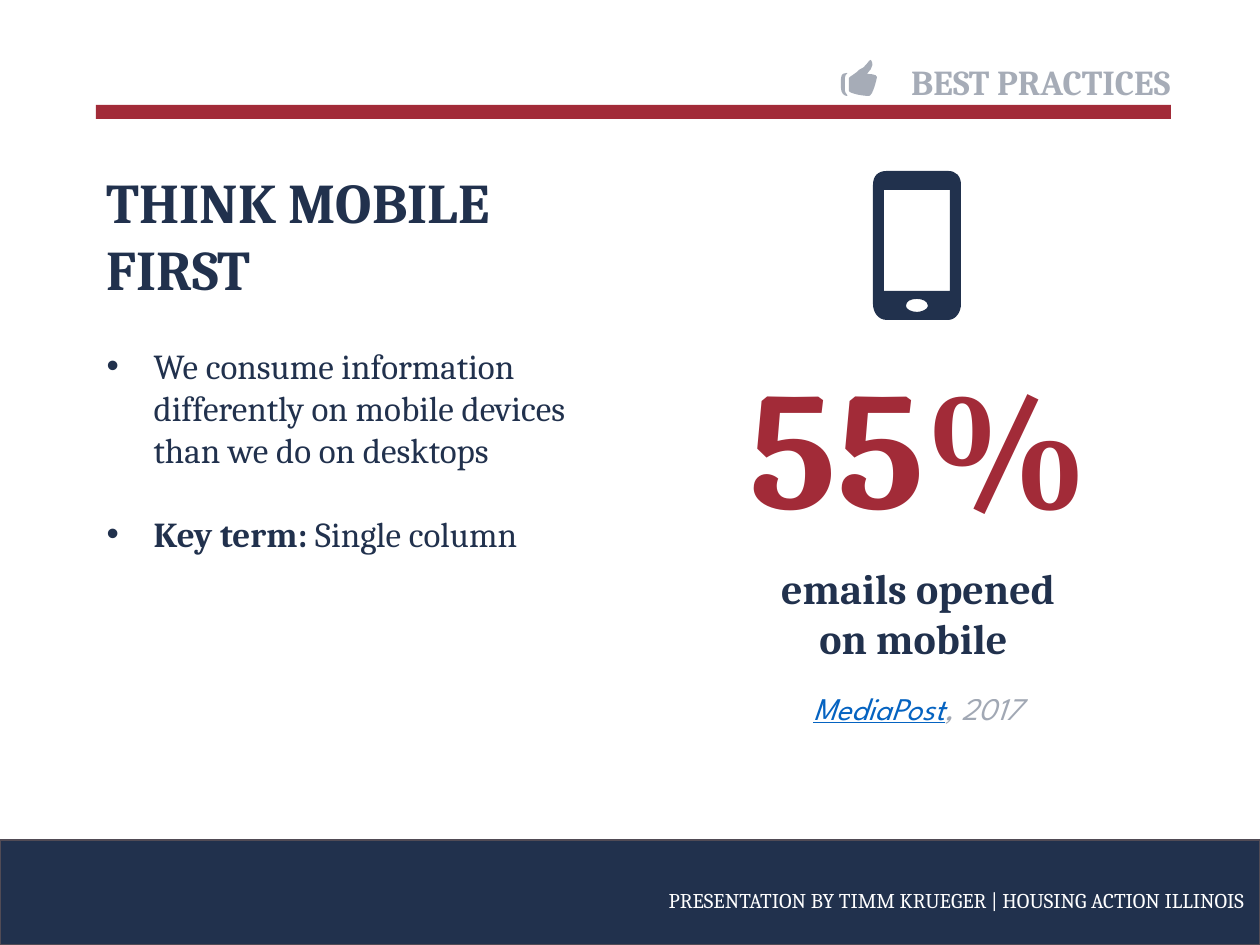
from pptx import Presentation, util as u
from pptx.dml.color import RGBColor
from pptx.enum import shapes, text
from pptx.oxml import ns, xmlchemy as xml

NAVY = RGBColor(0x21, 0x31, 0x4D)
RED = RGBColor(0xA2, 0x2B, 0x38)
WHITE = RGBColor(0xFF, 0xFF, 0xFF)
EDGE = RGBColor(0x51, 0x4B, 0x55)
LINK = RGBColor(0x05, 0x63, 0xC1)
PX = 914400 / 126


def write(para, words, size=20, color=NAVY, bold=False, slant=False, line=False,
          face="Cambria", align=text.PP_ALIGN.LEFT):
    para.alignment = align
    run = para.add_run()
    run.text = words
    font = run.font
    font.name, font.size, font.color.rgb = face, u.Pt(size), color
    font.bold, font.italic, font.underline = bold, slant, line
    return run


def trace(rings):
    x, y = rings[0][0]
    pen = slide.shapes.build_freeform(round(x * PX), round(y * PX))
    for i, ring in enumerate(rings):
        if i:
            pen.move_to(ring[0][0] * PX, ring[0][1] * PX)
        dots = [(part[n] * PX, part[n + 1] * PX)
                for part in ring[1:] for n in range(0, len(part), 2)]
        pen.add_line_segments(dots, close=True)
    icon = pen.convert_to_shape()
    steps = icon._element.iter(ns.qn("a:lnTo"))
    steps = iter(list(steps))
    for part in [part for ring in rings for part in ring[1:]]:
        step = next(steps)
        if len(part) == 6:
            curve = xml.OxmlElement("a:cubicBezTo")
            step.addprevious(curve)
            for old in (step, next(steps), next(steps)):
                curve.append(old[0])
                old.getparent().remove(old)
    icon.shadow.inherit = False
    icon.fill.solid()
    icon.fill.fore_color.rgb = NAVY
    icon.line.fill.background()
    return icon


deck = Presentation()
deck.slide_width, deck.slide_height = u.Inches(10), u.Inches(7.5)
slide = deck.slides.add_slide(deck.slide_layouts[1])
title, body = slide.shapes.title, slide.placeholders[1]

bars = []
for x, y, w, h, color in [(0, 840, 1260, 105, NAVY), (96, 105, 1075, 14, RED)]:
    bar = slide.shapes.add_shape(shapes.MSO_SHAPE.RECTANGLE,
                                 *[round(n * PX) for n in (x, y, w, h)])
    bar.shadow.inherit = False
    bar.fill.solid()
    bar.fill.fore_color.rgb = color
    bar.line.fill.background()
    bars.append(bar)
bars[0].line.color.rgb = EDGE
bars[0].line.width = u.Pt(1.5)

thumb = trace([
    [(867, 74), (867, 73, 876, 67, 871, 60), (869, 59, 866, 68, 859, 70),
     (857, 73, 849, 77, 849, 78), (849, 91), (849, 93, 861, 96, 869, 96),
     (873, 96, 877, 78, 877, 77), (877, 74, 868, 74, 867, 74)],
    [(847, 73), (845, 73, 841, 73, 841, 79), (841, 88), (841, 94, 845, 96, 847, 96),
     (849, 96, 845, 93, 845, 91), (845, 78), (845, 74, 849, 73, 847, 73)],
])
trace([
    [(948, 171), (887, 171), (878, 171, 873, 176, 873, 185), (873, 304),
     (873, 312, 878, 320, 887, 320), (948, 320), (956, 320, 961, 312, 961, 304),
     (961, 185), (961, 176, 956, 171, 948, 171)],
    [(917, 312), (911, 312, 906, 309, 906, 306), (906, 301, 911, 299, 917, 299),
     (922, 299, 928, 301, 928, 306), (928, 309, 922, 312, 917, 312)],
    [(950, 291), (884, 291), (884, 190), (950, 190), (950, 291)],
])

frames = []
for box, x, y, w, h in [(title, 94, 161, 481, 149), (body, 94, 338, 517, 310),
                        (None, 578, 869, 679, 48), (None, 869, 54, 314, 55),
                        (None, 726, 335, 386, 217), (None, 742, 556, 352, 115),
                        (None, 801, 683, 276, 50)]:
    spot = [round(n * PX) for n in (x, y, w, h)]
    if box is None:
        box = slide.shapes.add_textbox(*spot)
    else:
        box.left, box.top, box.width, box.height = spot
    frame = box.text_frame
    frame.word_wrap = True
    frame.auto_size = text.MSO_AUTO_SIZE.NONE
    frame.vertical_anchor = text.MSO_ANCHOR.TOP
    frames.append(frame)
head, points, foot, label, share, claim, cite = frames
cite.word_wrap = False

write(head.paragraphs[0], "THINK MOBILE FIRST", size=32, bold=True)

items = [[("We consume information differently on mobile devices than we do on desktops", False)],
         [("Key term: ", True), ("Single column", False)]]
for i, item in enumerate(items):
    para = points.add_paragraph() if i else points.paragraphs[0]
    props = para._p.get_or_add_pPr()
    props.set("marL", str(round(47 * PX)))
    props.set("indent", str(round(-47 * PX)))
    mark = xml.OxmlElement("a:buChar")
    mark.set("char", "•")
    props.append(mark)
    para.space_before = u.Pt(24 * i)
    for words, bold in item:
        write(para, words, bold=bold)

RIGHT, MID = text.PP_ALIGN.RIGHT, text.PP_ALIGN.CENTER
foot.paragraphs[0].line_spacing = 1.5
write(foot.paragraphs[0], "PRESENTATION BY TIMM KRUEGER | HOUSING ACTION ILLINOIS",
      size=12, color=WHITE, align=RIGHT)
topic = write(label.paragraphs[0], "BEST PRACTICES", bold=True, align=RIGHT)
write(share.paragraphs[0], "55%", size=96, color=RED, bold=True, align=MID)
write(claim.paragraphs[0], "emails opened on mobile ", size=24, bold=True, align=MID)
write(cite.paragraphs[0], "MediaPost", size=18, color=LINK, slant=True, line=True,
      face="League Spartan")
year = write(cite.paragraphs[0], ", 2017", size=18, slant=True, face="League Spartan")

for node, amount in [(thumb._element, 40), (topic._r, 40), (year._r, 42)]:
    tint = next(node.iter(ns.qn("a:srgbClr")))
    alpha = xml.OxmlElement("a:alpha")
    alpha.set("val", str(amount * 1000))
    tint.append(alpha)

deck.save("out.pptx")
